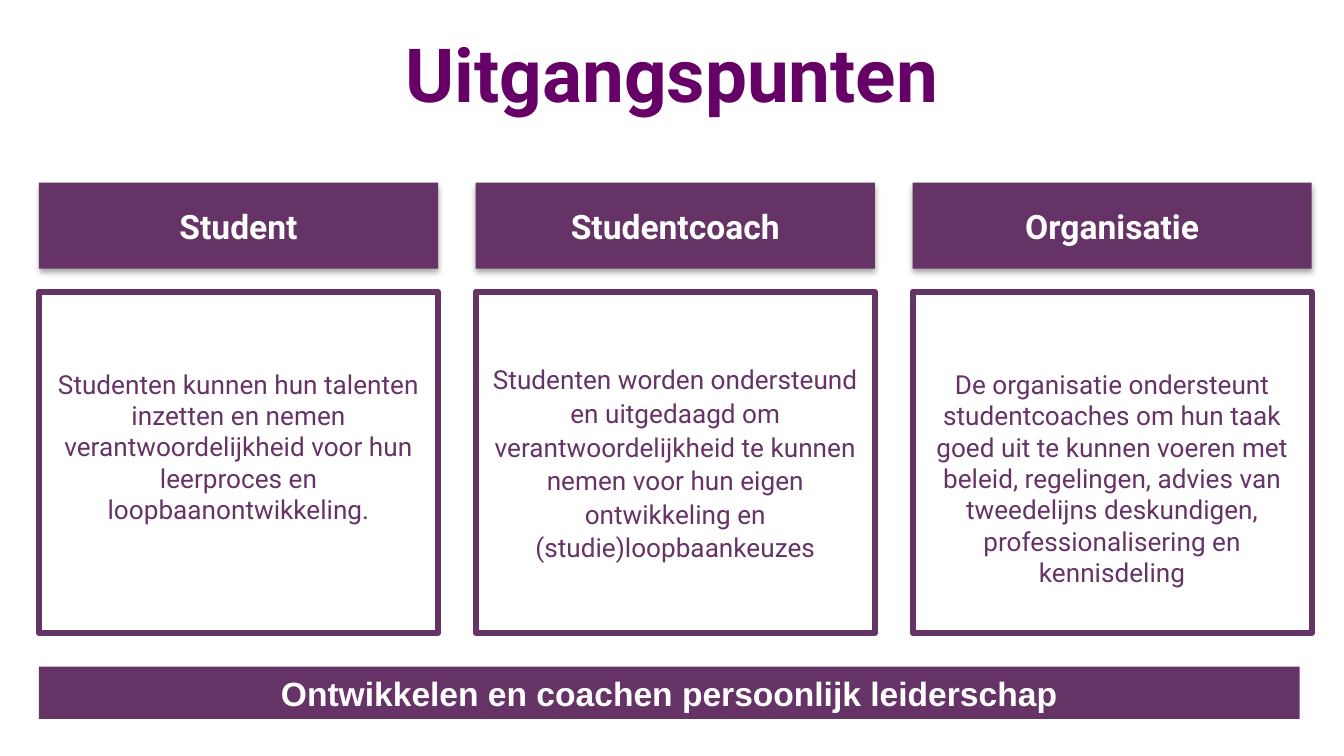
import lxml.etree
import pptx
import pptx.dml.color
import pptx.enum.shapes
import pptx.enum.text
import pptx.oxml
import pptx.oxml.ns
import pptx.util

PX = 4572
COLORS = {"title": "660066", "purple": "663366", "white": "FFFFFF", "shadow": "000000"}
FORMATS = {
    "title": {"name": "Roboto", "size": pptx.util.Pt(40), "bold": True},
    "header": {"name": "Roboto", "size": pptx.util.Pt(18), "bold": True},
    "body": {"name": "Roboto", "size": pptx.util.Pt(14), "bold": False},
    "footer": {"name": "Arial", "size": pptx.util.Pt(18), "bold": True},
}
COLUMNS = [
    ("Student", "Studenten kunnen hun talenten inzetten en nemen verantwoordelijkheid "
     "voor hun leerproces en loopbaanontwikkeling.", 10, 57, 1.0),
    ("Studentcoach", "Studenten worden ondersteund en uitgedaagd om verantwoordelijkheid te "
     "kunnen nemen voor hun eigen ontwikkeling en (studie)loopbaankeuzes", 10, 10, 1.07),
    ("Organisatie", "De organisatie ondersteunt studentcoaches om hun taak goed uit te kunnen "
     "voeren met beleid, regelingen, advies van tweedelijns deskundigen, "
     "professionalisering en kennisdeling", 57, 10, 1.0),
]
LEFT, STEP, WIDTH = 58, 650, 594


def write(sp, text, style, color, top=10, bottom=10, spacing=1.0):
    tf = sp.text_frame
    frame = {"word_wrap": True, "vertical_anchor": pptx.enum.text.MSO_ANCHOR.MIDDLE,
             "auto_size": pptx.enum.text.MSO_AUTO_SIZE.NONE,
             "margin_left": 20 * PX, "margin_right": 20 * PX,
             "margin_top": top * PX, "margin_bottom": bottom * PX}
    for key, value in frame.items():
        setattr(tf, key, value)
    p = tf.paragraphs[0]
    p.alignment = pptx.enum.text.PP_ALIGN.CENTER
    p.line_spacing = spacing
    r = p.add_run()
    r.text = text
    for key, value in FORMATS[style].items():
        setattr(r.font, key, value)
    r.font.color.rgb = pptx.dml.color.RGBColor.from_string(COLORS[color])


def add_box(x, y, w, h, filled):
    sp = slide.shapes.add_shape(pptx.enum.shapes.MSO_SHAPE.RECTANGLE,
                                x * PX, y * PX, w * PX, h * PX)
    sp.shadow.inherit = False
    purple = pptx.dml.color.RGBColor.from_string(COLORS["purple"])
    if filled:
        sp.fill.solid()
        sp.fill.fore_color.rgb = purple
        sp.line.fill.background()
    else:
        sp.fill.background()
        sp.line.color.rgb = purple
        sp.line.width = pptx.util.Pt(3.25)
        ln = sp._element.spPr.find(pptx.oxml.ns.qn("a:ln"))
        lxml.etree.SubElement(ln, pptx.oxml.ns.qn("a:round"))
    return sp


prs = pptx.Presentation()
prs.slide_width, prs.slide_height = 2000 * PX, 1125 * PX
slide = prs.slides.add_slide(prs.slide_layouts[5])

title = slide.shapes.title
for key, value in {"left": 0, "top": 14, "width": 2000, "height": 188}.items():
    setattr(title, key, value * PX)
write(title, "Uitgangspunten", "title", "title")

for i, (heading, body, top, bottom, spacing) in enumerate(COLUMNS):
    x = LEFT + i * STEP
    sp = add_box(x, 272, WIDTH, 128, True)
    effects = sp._element.spPr.find(pptx.oxml.ns.qn("a:effectLst"))
    effects.append(pptx.oxml.parse_xml(
        f'<a:outerShdw {pptx.oxml.ns.nsdecls("a")} blurRad="{pptx.util.Pt(3.1)}" '
        f'dist="{pptx.util.Pt(1.8)}" dir="5400000" rotWithShape="0">'
        f'<a:srgbClr val="{COLORS["shadow"]}"><a:alpha val="35000"/></a:srgbClr>'
        '</a:outerShdw>'))
    write(sp, heading, "header", "white")
    sp = add_box(x, 434, WIDTH, 508, False)
    write(sp, body, "body", "purple", top, bottom, spacing)

sp = add_box(LEFT, 992, 1876, 78, True)
write(sp, "Ontwikkelen en coachen persoonlijk leiderschap", "footer", "white")

prs.save("out.pptx")
